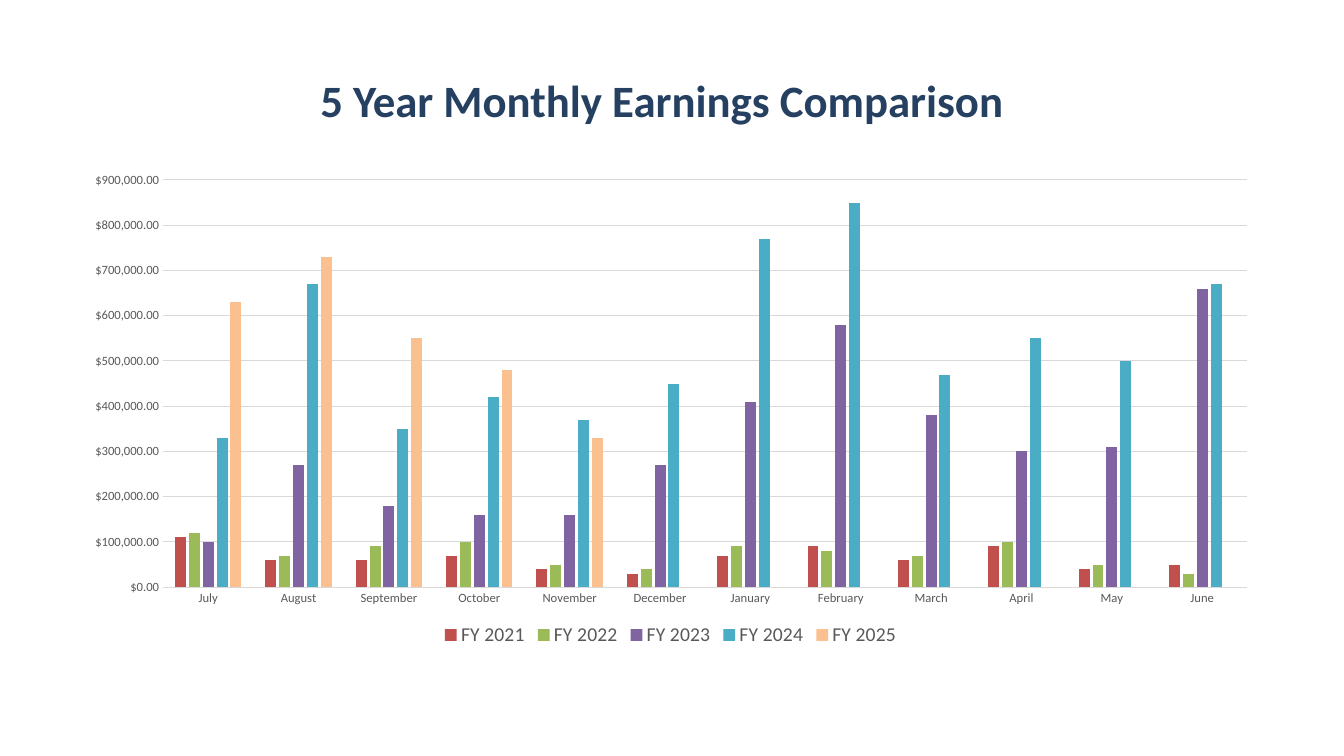
"""Build a slide that compares monthly earnings over five years."""
from dataclasses import dataclass

from lxml import etree
from pptx import Presentation
from pptx.chart.axis import CategoryAxis, ValueAxis
from pptx.chart.chart import Chart
from pptx.chart.data import CategoryChartData
from pptx.dml.color import RGBColor
from pptx.enum.chart import XL_CHART_TYPE, XL_LEGEND_POSITION, XL_TICK_MARK
from pptx.enum.text import MSO_ANCHOR, MSO_AUTO_SIZE, PP_ALIGN
from pptx.oxml.ns import qn
from pptx.slide import Slide
from pptx.text.text import Font, _Paragraph
from pptx.util import Pt

COLUMN = XL_CHART_TYPE.COLUMN_CLUSTERED
BOTTOM = XL_LEGEND_POSITION.BOTTOM
NO_TICK = XL_TICK_MARK.NONE
MIDDLE = MSO_ANCHOR.MIDDLE
NO_FIT = MSO_AUTO_SIZE.NONE
CENTER = PP_ALIGN.CENTER

FACE = "Calibri"
COLORS = {
    "navy": "254061", "black": "000000", "gray": "595959", "rule": "D9D9D9",
    "red": "C0504D", "green": "9BBB59", "purple": "8064A2",
    "teal": "4BACC6", "peach": "FAC090",
}
MONTHS = ["July", "August", "September", "October", "November", "December",
          "January", "February", "March", "April", "May", "June"]
UNIT = 10_000


@dataclass(frozen=True)
class Year:
    """One fiscal year, with monthly values in units of ten thousand."""
    name: str
    color: str
    values: tuple[int, ...]


YEARS = [
    Year("FY 2021", "red", (11, 6, 6, 7, 4, 3, 7, 9, 6, 9, 4, 5)),
    Year("FY 2022", "green", (12, 7, 9, 10, 5, 4, 9, 8, 7, 10, 5, 3)),
    Year("FY 2023", "purple", (10, 27, 18, 16, 16, 27, 41, 58, 38, 30, 31, 66)),
    Year("FY 2024", "teal", (33, 67, 35, 42, 37, 45, 77, 85, 47, 55, 50, 67)),
    Year("FY 2025", "peach", (63, 73, 55, 48, 33, 0, 0, 0, 0, 0, 0, 0)),
]


def tint(name: str) -> RGBColor:
    """Return a named color."""
    return RGBColor.from_string(COLORS[name])


def set_font(font: Font, size: float, color: str, bold: bool = False) -> None:
    """Set face, size, color and weight."""
    font.name = FACE
    font.size = Pt(size)
    font.bold = bold
    font.color.rgb = tint(color)


def add_text(para: _Paragraph, text: str, *, size: float, color: str,
             bold: bool = False) -> None:
    """Add a run of text in the given format."""
    run = para.add_run()
    run.text = text
    set_font(run.font, size, color, bold)


def add_title(slide: Slide) -> None:
    """Place and fill the title."""
    title = slide.shapes.title
    title.left, title.top = Pt(64), Pt(41)
    title.width, title.height = Pt(828), Pt(57)
    frame = title.text_frame
    frame.word_wrap = True
    frame.auto_size = NO_FIT
    frame.vertical_anchor = MIDDLE
    para = frame.paragraphs[0]
    para.alignment = CENTER
    para.line_spacing = 0.9
    add_text(para, "5 Year Monthly Earnings Comparison", size=32,
             color="navy", bold=True)
    add_text(para, " ", size=44, color="black")


def style_axis(axis: CategoryAxis | ValueAxis) -> None:
    """Hide tick marks and set the label font."""
    axis.major_tick_mark = axis.minor_tick_mark = NO_TICK
    set_font(axis.tick_labels.font, 9, "gray")


def set_plot(chart: Chart, x: float, y: float, w: float, h: float) -> None:
    """Fix the inner plot area as shares of the chart frame."""
    area = chart._chartSpace.find(".//" + qn("c:plotArea"))
    for old in area.findall(qn("c:layout")):
        area.remove(old)
    layout = etree.Element(qn("c:layout"))
    manual = etree.SubElement(layout, qn("c:manualLayout"))
    parts = {"layoutTarget": "inner", "xMode": "edge", "yMode": "edge",
             "x": x, "y": y, "w": w, "h": h}
    for tag, value in parts.items():
        etree.SubElement(manual, qn(f"c:{tag}")).set("val", str(value))
    area.insert(0, layout)


def add_columns(slide: Slide) -> None:
    """Add the column chart with its axes and legend."""
    data = CategoryChartData()
    data.categories = MONTHS
    for year in YEARS:
        data.add_series(year.name, [value * UNIT for value in year.values])
    chart = slide.shapes.add_chart(COLUMN, Pt(67), Pt(114.5), Pt(824.4),
                                   Pt(350.6), data).chart
    set_font(chart.font, 10, "black")
    chart.has_title = False

    plot = chart.plots[0]
    plot.gap_width, plot.overlap = 219, -27
    plot.vary_by_categories = False
    for series, year in zip(plot.series, YEARS):
        series.format.fill.solid()
        series.format.fill.fore_color.rgb = tint(year.color)

    months, money = chart.category_axis, chart.value_axis
    style_axis(months)
    style_axis(money)
    money.minimum_scale, money.maximum_scale = 0, 900_000
    money.major_unit = 100_000
    money.tick_labels.number_format = '"$"#,##0.00'
    money.tick_labels.number_format_is_linked = False
    money.format.line.fill.background()
    for line in (months.format.line, money.major_gridlines.format.line):
        line.color.rgb = tint("rule")
        line.width = Pt(0.75)

    chart.has_legend = True
    chart.legend.position = BOTTOM
    chart.legend.include_in_layout = False
    set_font(chart.legend.font, 14, "gray")
    set_plot(chart, 0.06, 0.04, 0.94, 0.83)


def main() -> None:
    """Build and save the slide."""
    deck = Presentation()
    deck.slide_width, deck.slide_height = Pt(960), Pt(540)
    slide = deck.slides.add_slide(deck.slide_layouts[5])
    add_title(slide)
    add_columns(slide)
    deck.save("out.pptx")


if __name__ == "__main__":
    main()
